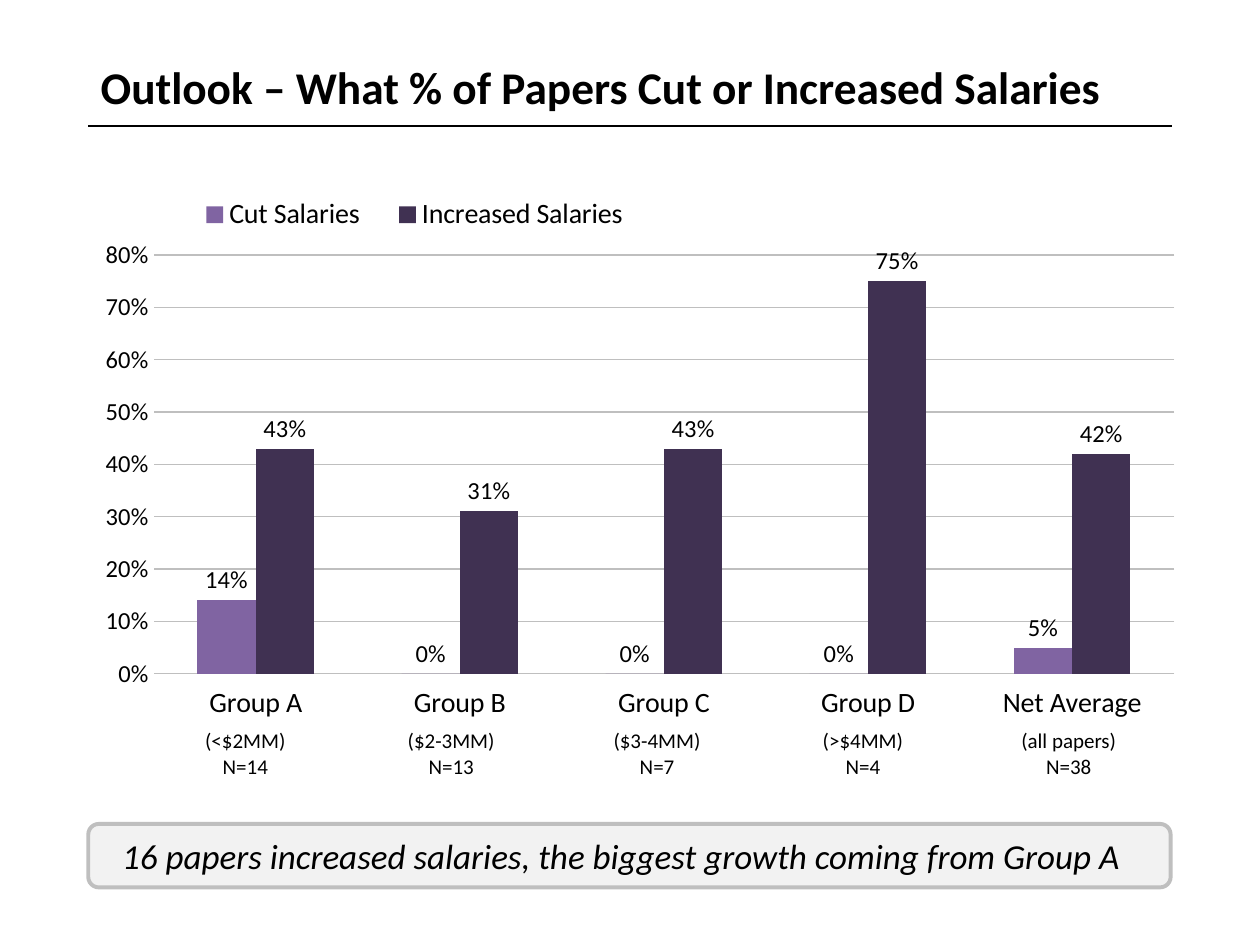
from lxml import etree
from pptx import Presentation
from pptx import util as u
from pptx.chart import data
from pptx.dml.color import RGBColor
from pptx.enum import chart as ch, shapes, text
from pptx.oxml import parse_xml
from pptx.oxml.ns import nsdecls, qn

FONT = "Calibri"
BLACK, GREY, PALE = "000000", "BFBFBF", "F2F2F2"
GROUPS = [
    ("Group A", "(<$2MM)", "N=14"),
    ("Group B", "($2-3MM)", "N=13"),
    ("Group C", "($3-4MM)", "N=7"),
    ("Group D", "(>$4MM)", "N=4"),
    ("Net Average", "(all papers)", "N=38"),
]
SERIES = [
    ("Cut Salaries", "8064A2", (0.14, 0, 0, 0, 0.05)),
    ("Increased Salaries", "403152", (0.43, 0.31, 0.43, 0.75, 0.42)),
]


def colour(value):
    return RGBColor.from_string(value)


def set_all(target, values):
    for name, value in values.items():
        setattr(target, name, value)


def style_font(font, size, **extra):
    set_all(font, {"name": FONT, "size": u.Pt(size), **extra})
    font.color.rgb = colour(BLACK)


def style_line(line, value, width):
    line.color.rgb = colour(value)
    line.width = u.Pt(width)


def write(frame, words, size, align=text.PP_ALIGN.LEFT, **extra):
    para = frame.paragraphs[0]
    para.alignment = align
    span = para.add_run()
    span.text = words
    style_font(span.font, size, **extra)


def set_layout(element, before, box, inner=False):
    """Place a chart part by fractions of the chart, ahead of the child named."""
    target = '<c:layoutTarget val="inner"/>' if inner else ""
    places = "".join(f'<c:{key}Mode val="edge"/>' for key in "xy")
    places += "".join(f'<c:{key} val="{val}"/>' for key, val in zip("xywh", box))
    layout = parse_xml(f"<c:layout {nsdecls('c')}><c:manualLayout>{target}{places}"
                       "</c:manualLayout></c:layout>")
    for old in element.findall(qn("c:layout")):
        element.remove(old)
    element.find(qn(before)).addprevious(layout)


def add_heading(page, left, top, width, height):
    box = page.shapes.add_textbox(left, top, width, height)
    box.text_frame.word_wrap = True
    write(box.text_frame, "Outlook – What % of Papers Cut or Increased Salaries", 25.9, bold=True)
    base = top + height
    rule = page.shapes.add_connector(shapes.MSO_CONNECTOR.STRAIGHT, left, base, left + width, base)
    style_line(rule.line, BLACK, 0.75)
    etree.SubElement(rule._element.spPr, qn("a:effectLst"))


def style_axes(chart):
    for axis, size in ((chart.category_axis, 16), (chart.value_axis, 14)):
        style_font(axis.tick_labels.font, size)
        axis.major_tick_mark = axis.minor_tick_mark = ch.XL_TICK_MARK.NONE
        axis.format.line.fill.background()
    chart.category_axis.tick_label_position = ch.XL_TICK_LABEL_POSITION.LOW
    values = chart.value_axis
    set_all(values, {"minimum_scale": 0, "maximum_scale": 0.8, "major_unit": 0.1})
    set_all(values.tick_labels, {"number_format": "0%", "number_format_is_linked": False})
    style_line(values.major_gridlines.format.line, GREY, 0.75)


def style_series(series, value):
    series.format.fill.solid()
    series.format.fill.fore_color.rgb = colour(value)
    set_all(series.data_labels, {
        "show_value": True, "number_format": "0%", "number_format_is_linked": False,
        "position": ch.XL_LABEL_POSITION.OUTSIDE_END,
    })
    style_font(series.data_labels.font, 14)


def add_salary_chart(page, left, top, width, height):
    source = data.CategoryChartData(number_format="0%")
    source.categories = [name for name, _, _ in GROUPS]
    for name, _, values in SERIES:
        source.add_series(name, values)
    kind = ch.XL_CHART_TYPE.COLUMN_CLUSTERED
    chart = page.shapes.add_chart(kind, left, top, width, height, source).chart
    style_font(chart.font, 18)
    set_all(chart, {"has_title": False, "has_legend": True})
    set_all(chart.legend, {"position": ch.XL_LEGEND_POSITION.TOP, "include_in_layout": False})
    style_font(chart.legend.font, 16)
    set_layout(chart.legend._element, "c:overlay", (0.1, 0.04, 0.42, 0.07))
    plot = chart.plots[0]
    set_all(plot, {"gap_width": 150, "overlap": 0, "vary_by_categories": False})
    set_layout(chart._chartSpace.chart.plotArea, "c:barChart", (0.08, 0.14, 0.9, 0.68), True)
    style_axes(chart)
    for series, (_, value, _) in zip(plot.series, SERIES):
        style_series(series, value)


def add_group_notes(page, left, top, width, height):
    rows = list(zip(*GROUPS))[1:]
    table = page.shapes.add_table(len(rows), len(GROUPS), left, top, width, height).table
    set_all(table, {"first_row": False, "horz_banding": False})
    for row, words in enumerate(rows):
        for column, word in enumerate(words):
            cell = table.cell(row, column)
            set_all(cell, {f"margin_{side}": 0 for side in ("left", "top", "right", "bottom")})
            cell.vertical_anchor = text.MSO_ANCHOR.MIDDLE
            cell.fill.background()
            write(cell.text_frame, word, 12, text.PP_ALIGN.CENTER)


def add_takeaway(page, left, top, width, height):
    banner = page.shapes.add_shape(shapes.MSO_SHAPE.ROUNDED_RECTANGLE, left, top, width, height)
    banner.shadow.inherit = False
    banner.fill.solid()
    banner.fill.fore_color.rgb = colour(PALE)
    style_line(banner.line, GREY, 2.25)
    set_all(banner.text_frame, {
        "word_wrap": True, "vertical_anchor": text.MSO_ANCHOR.MIDDLE, "margin_right": u.Cm(0.57),
    })
    write(banner.text_frame, "16 papers increased salaries, the biggest growth coming from Group A",
          20, text.PP_ALIGN.CENTER, italic=True)


def main():
    deck = Presentation()
    set_all(deck, {"slide_width": u.Cm(25.4), "slide_height": u.Cm(19.05)})
    page = deck.slides.add_slide(deck.slide_layouts[6])
    regions = [
        (add_salary_chart, (1.27, 3.4, 22.86, 12.42)),
        (add_heading, (1.78, 1.07, 21.84, 1.47)),
        (add_takeaway, (1.78, 16.61, 21.82, 1.28)),
        (add_group_notes, (2.87, 14.68, 20.75, 1.04)),
    ]
    for add_region, box in regions:
        add_region(page, *map(u.Cm, box))
    deck.save("out.pptx")


if __name__ == "__main__":
    main()
